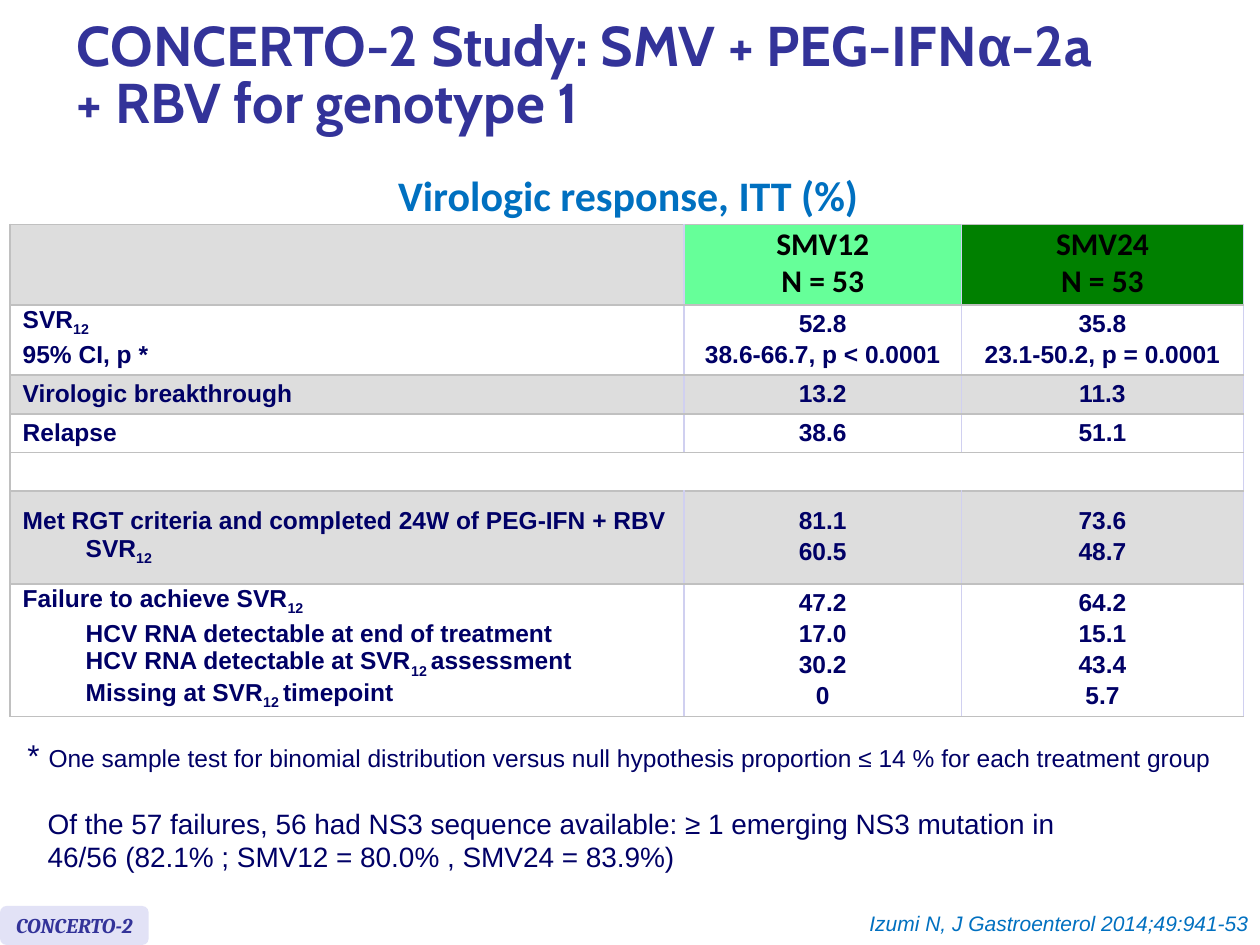
from lxml.etree import SubElement
from pptx import Presentation
from pptx.dml.color import RGBColor
from pptx.enum.shapes import MSO_SHAPE
from pptx.enum.text import MSO_ANCHOR, MSO_AUTO_SIZE, PP_ALIGN
from pptx.oxml import parse_xml
from pptx.oxml.ns import nsdecls, qn
from pptx.util import Inches, Pt

NAVY = RGBColor(0x00, 0x00, 0x66)
INDIGO = RGBColor(0x33, 0x33, 0x99)
BLUE = RGBColor(0x00, 0x70, 0xC0)
LAVENDER = RGBColor(0xE2, 0xE2, 0xF6)
BLACK = RGBColor(0x00, 0x00, 0x00)
WHITE = RGBColor(0xFF, 0xFF, 0xFF)
GRAY = RGBColor(0xDD, 0xDD, 0xDD)
MINT = RGBColor(0x66, 0xFF, 0x99)
GREEN = RGBColor(0x00, 0x80, 0x00)
RULE_GRAY = RGBColor(0xC0, 0xC0, 0xC0)
RULE_LILAC = RGBColor(0xD0, 0xD0, 0xF0)

HEAD = {"name": "Calibri", "size": Pt(18), "bold": True, "color": BLACK}
BODY = {"name": "Arial", "size": Pt(14), "bold": True, "color": NAVY}
NOTE = {"name": "Arial", "size": Pt(14), "color": NAVY}
TITLE = {"name": "Cabin", "size": Pt(32), "bold": True, "color": INDIGO}
SUBTITLE = {"name": "Calibri", "size": Pt(24), "bold": True, "color": BLUE}
TAG = {"name": "Cambria", "size": Pt(12), "bold": True, "italic": True, "color": INDIGO}
CITATION = {"name": "Arial", "size": Pt(12), "italic": True, "color": BLUE}

# In cell text, _x_ marks a subscript and a leading > marks an indented line.
COLUMNS = [5.35, 2.2, 2.24]
ROWS = [
    (0.64, [GRAY, MINT, GREEN], [[], ["SMV12", "N = 53"], ["SMV24", "N = 53"]]),
    (0.54, [WHITE] * 3, [["SVR_12_", "95% CI, p *"],
                         ["52.8", "38.6-66.7, p < 0.0001"],
                         ["35.8", "23.1-50.2, p = 0.0001"]]),
    (0.29, [GRAY] * 3, [["Virologic breakthrough"], ["13.2"], ["11.3"]]),
    (0.29, [WHITE] * 3, [["Relapse"], ["38.6"], ["51.1"]]),
    (0.29, [WHITE] * 3, [[], [], []]),
    (0.74, [GRAY] * 3, [["Met RGT criteria and completed 24W of PEG-IFN + RBV", ">SVR_12_"],
                        ["81.1", "60.5"], ["73.6", "48.7"]]),
    (1.02, [WHITE] * 3, [["Failure to achieve SVR_12_",
                          ">HCV RNA detectable at end of treatment",
                          ">HCV RNA detectable at SVR_12 _assessment",
                          ">Missing at SVR_12 _timepoint"],
                         ["47.2", "17.0", "30.2", "0"],
                         ["64.2", "15.1", "43.4", "5.7"]]),
]
SPACER_ROW = 4


def add_span(para, text, style, **changes):
    span = para.add_run()
    span.text = text
    for key, value in {**style, **changes}.items():
        if key == "color":
            span.font.color.rgb = value
        else:
            setattr(span.font, key, value)
    return span


def add_text(page, box, wrap=False, anchor=MSO_ANCHOR.TOP, align=PP_ALIGN.LEFT):
    """Add a text box and return its first paragraph."""
    frame = page.shapes.add_textbox(*map(Inches, box)).text_frame
    frame.word_wrap = wrap
    frame.vertical_anchor = anchor
    frame.paragraphs[0].alignment = align
    return frame.paragraphs[0]


def place_title(page, box):
    title = page.shapes.title
    title.left, title.top, title.width, title.height = map(Inches, box)
    frame = title.text_frame
    frame.auto_size = MSO_AUTO_SIZE.NONE
    frame.vertical_anchor = MSO_ANCHOR.MIDDLE
    para = frame.paragraphs[0]
    para.alignment = PP_ALIGN.LEFT
    para.line_spacing = 0.85
    add_span(para, "CONCERTO-2 Study: SMV + PEG-IFN", TITLE)
    add_span(para, "α", TITLE, name="Arial")
    add_span(para, "-2a ", TITLE)
    para.add_line_break()
    add_span(para, "+ RBV for genotype 1", TITLE)


def place_subtitle(page, box):
    para = add_text(page, box, anchor=MSO_ANCHOR.MIDDLE, align=PP_ALIGN.CENTER)
    para.line_spacing = Pt(20)
    add_span(para, "Virologic response, ITT (%)", SUBTITLE)


def set_borders(cell, left):
    properties = cell._tc.get_or_add_tcPr()
    edges = [("L", left), ("R", RULE_LILAC), ("T", RULE_GRAY), ("B", RULE_GRAY)]
    for index, (edge, color) in enumerate(edges):
        properties.insert(index, parse_xml(
            f'<a:ln{edge} {nsdecls("a")} w="12700"><a:solidFill>'
            f'<a:srgbClr val="{color}"/></a:solidFill></a:ln{edge}>'))


def fill_cell(cell, lines, style, spacing, align):
    cell.vertical_anchor = MSO_ANCHOR.MIDDLE
    frame = cell.text_frame
    if not lines:
        # Keep an empty cell from stretching its row
        SubElement(frame.paragraphs[0]._p, qn("a:endParaRPr")).set("sz", "1200")
    for index, line in enumerate(lines):
        para = frame.add_paragraph() if index else frame.paragraphs[0]
        para.alignment = align
        para.line_spacing = spacing
        if index:
            para.space_before = round(style["size"] * 0.2)
        if line.startswith(">"):
            para.level = 1
            properties = para._p.get_or_add_pPr()
            properties.set("marL", str(Inches(0.5)))
            properties.set("indent", "0")
        for part, text in enumerate(line.lstrip(">").split("_")):
            if text:
                span = add_span(para, text, style)
                if part % 2:
                    span._r.get_or_add_rPr().set("baseline", "-25000")


def place_response_table(page, box):
    table = page.shapes.add_table(len(ROWS), len(COLUMNS), *map(Inches, box)).table
    table.first_row = table.horz_banding = False
    for column, width in zip(table.columns, COLUMNS):
        column.width = Inches(width)
    for r, (height, fills, texts) in enumerate(ROWS):
        table.rows[r].height = Inches(height)
        style, spacing = (BODY, Pt(15)) if r else (HEAD, 0.8)
        for c, (color, lines) in enumerate(zip(fills, texts)):
            cell = table.cell(r, c)
            cell.fill.solid()
            cell.fill.fore_color.rgb = color
            set_borders(cell, RULE_LILAC if c else RULE_GRAY)
            fill_cell(cell, lines, style, spacing, PP_ALIGN.CENTER if c else PP_ALIGN.LEFT)
    table.cell(SPACER_ROW, 0).merge(table.cell(SPACER_ROW, len(COLUMNS) - 1))


def place_footnote(page, box):
    para = add_text(page, box)
    add_span(para, "* ", NOTE, size=Pt(18))
    add_span(para, "One sample test for binomial distribution versus null hypothesis "
                   "proportion ≤ 14 % for each treatment group", NOTE)


def place_mutation_note(page, box):
    para = add_text(page, box, wrap=True)
    add_span(para, "Of the 57 failures, 56 had NS3 sequence available: ≥ 1 emerging NS3 "
                   "mutation in 46/56 (82.1% ; SMV12 = 80.0% , SMV24 = 83.9%)",
             NOTE, size=Pt(16))


def place_study_tag(page, box):
    tag = page.shapes.add_shape(MSO_SHAPE.ROUNDED_RECTANGLE, *map(Inches, box))
    tag.shadow.inherit = False
    tag.fill.solid()
    tag.fill.fore_color.rgb = LAVENDER
    tag.line.fill.background()
    tag.text_frame.word_wrap = False
    tag.text_frame.vertical_anchor = MSO_ANCHOR.MIDDLE
    para = tag.text_frame.paragraphs[0]
    para.alignment = PP_ALIGN.CENTER
    add_span(para, "CONCERTO-2", TAG)


def place_citation(page, box):
    para = add_text(page, box, align=PP_ALIGN.RIGHT)
    add_span(para, "Izumi N, J Gastroenterol 2014;49:941-53", CITATION)


def main():
    deck = Presentation()
    deck.slide_width, deck.slide_height = Inches(10), Inches(7.5)
    page = deck.slides.add_slide(deck.slide_layouts[5])
    place_response_table(page, (0.08, 1.78, 9.8, 3.81))
    place_footnote(page, (0.12, 5.79, 9.64, 0.4))
    place_mutation_note(page, (0.28, 6.35, 8.25, 0.64))
    place_title(page, (0.51, 0.08, 9.13, 1.07))
    place_subtitle(page, (3.04, 1.41, 3.89, 0.4))
    place_study_tag(page, (0, 7.19, 1.18, 0.31))
    place_citation(page, (6.68, 7.18, 3.33, 0.3))
    deck.save("out.pptx")


if __name__ == "__main__":
    main()
